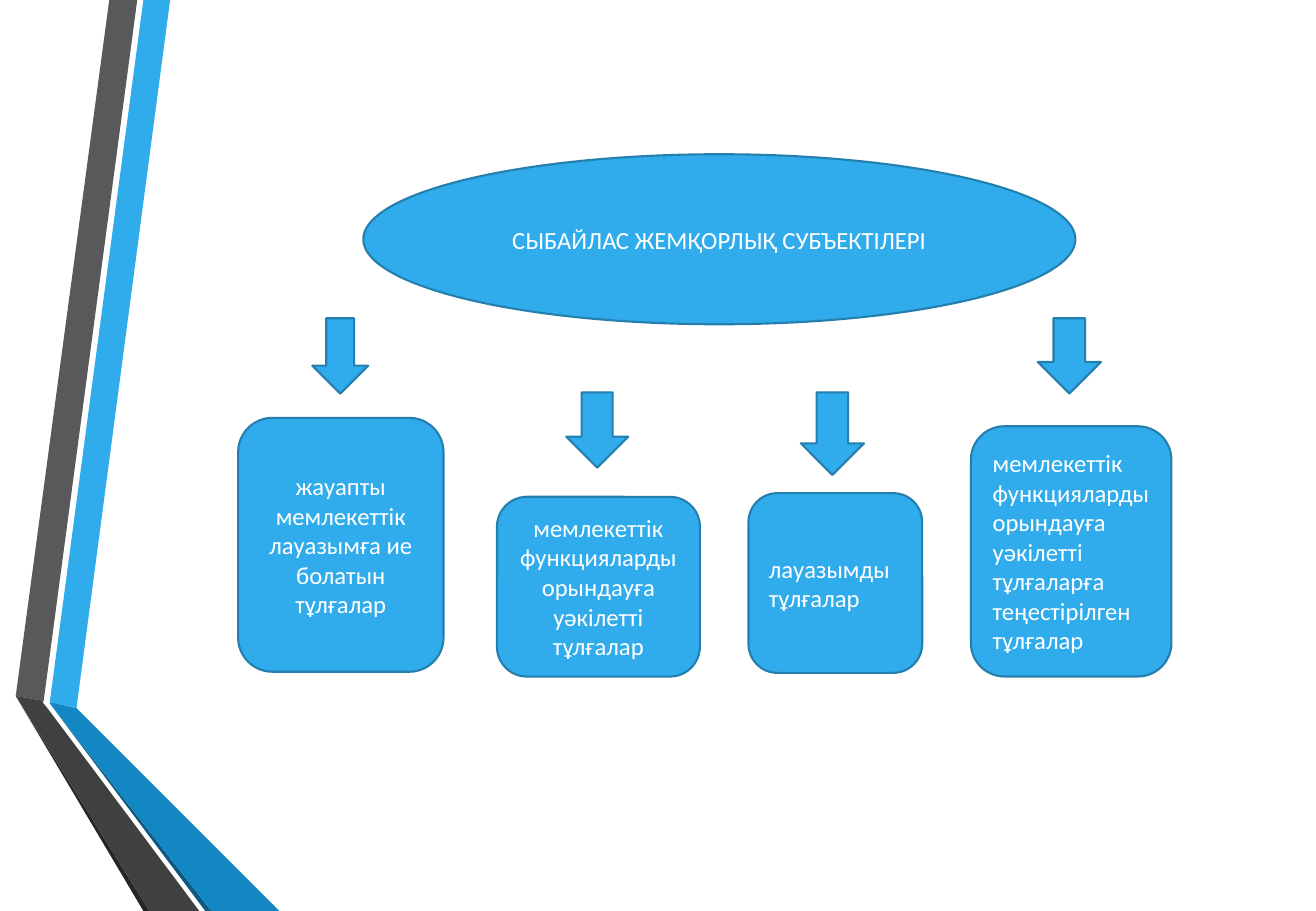
import pptx
import pptx.util
import pptx.dml.color
import pptx.enum.shapes
import pptx.enum.text

PX = 9144  # EMU per px, 100 px to the inch
KIND = pptx.enum.shapes.MSO_SHAPE
ALIGN = pptx.enum.text.PP_ALIGN


def color(code):
    return pptx.dml.color.RGBColor.from_string(code)


class Deck:
    font, size = "Calibri", 14.6
    blue, edge, white = "30ACEC", "247FAF", "FFFFFF"

    def __init__(self, width, height):
        self.file = pptx.Presentation()
        self.file.slide_width = width * PX
        self.file.slide_height = height * PX
        self.slide = self.file.slides.add_slide(self.file.slide_layouts[6])
        fill = self.slide.background.fill
        fill.solid()
        fill.fore_color.rgb = color(self.white)

    def paint(self, shape, code):
        shape.shadow.inherit = False
        shape.fill.solid()
        shape.fill.fore_color.rgb = color(code)

    def band(self, code, points):
        """Draw a filled polygon without an outline."""
        pen = self.slide.shapes.build_freeform(*points[0], scale=PX)
        pen.add_line_segments(points[1:], close=True)
        shape = pen.convert_to_shape()
        self.paint(shape, code)
        shape.line.fill.background()

    def shape(self, kind, box):
        shape = self.slide.shapes.add_shape(kind, *(n * PX for n in box))
        self.paint(shape, self.blue)
        shape.line.color.rgb = color(self.edge)
        shape.line.width = pptx.util.Pt(1.25)
        return shape

    def label(self, kind, box, text, align=ALIGN.CENTER):
        """Draw a shape with text centred in its height."""
        frame = self.shape(kind, box).text_frame
        frame.word_wrap = True
        frame.vertical_anchor = pptx.enum.text.MSO_ANCHOR.MIDDLE
        para = frame.paragraphs[0]
        para.text = text
        para.alignment = align
        para.font.name = self.font
        para.font.size = pptx.util.Pt(self.size)
        para.font.color.rgb = color(self.white)


BANDS = [
    ("30ACEC", [(41, 578), (63, 583), (140, 0), (118, 0)]),
    ("595959", [(113, 0), (90, 0), (13, 573), (36, 577)]),
    ("262626", [(13, 573), (118, 750), (123, 750)]),
    ("0C5A82", [(41, 579), (169, 750), (174, 750)]),
    ("1287C3", [(41, 578), (41, 579), (174, 750), (230, 750), (63, 583)]),
    ("404040", [(13, 573), (123, 750), (164, 750), (39, 583), (35, 578),
                (36, 577)]),
]
ARROWS = [(257, 262, 46, 62), (466, 323, 51, 62),
          (659, 323, 52, 68), (854, 262, 52, 62)]
GROUPS = [
    ((196, 344, 169, 209), ALIGN.CENTER,
     "жауапты мемлекеттік лауазымға ие болатын тұлғалар"),
    ((409, 409, 167, 148), ALIGN.CENTER,
     "мемлекеттік функцияларды орындауға уәкілетті тұлғалар"),
    ((616, 406, 143, 148), ALIGN.LEFT, "лауазымды тұлғалар"),
    ((799, 351, 165, 206), ALIGN.LEFT,
     "мемлекеттік функцияларды орындауға уәкілетті тұлғаларға "
     "теңестірілген тұлғалар"),
]


def main():
    deck = Deck(1083, 750)
    for code, points in BANDS:
        deck.band(code, points)
    deck.label(KIND.OVAL, (299, 127, 586, 140),
               "СЫБАЙЛАС ЖЕМҚОРЛЫҚ СУБЪЕКТІЛЕРІ")
    for box in ARROWS:
        deck.shape(KIND.DOWN_ARROW, box)
    for box, align, text in GROUPS:
        deck.label(KIND.ROUNDED_RECTANGLE, box, text, align)
    deck.file.save("out.pptx")


if __name__ == "__main__":
    main()
